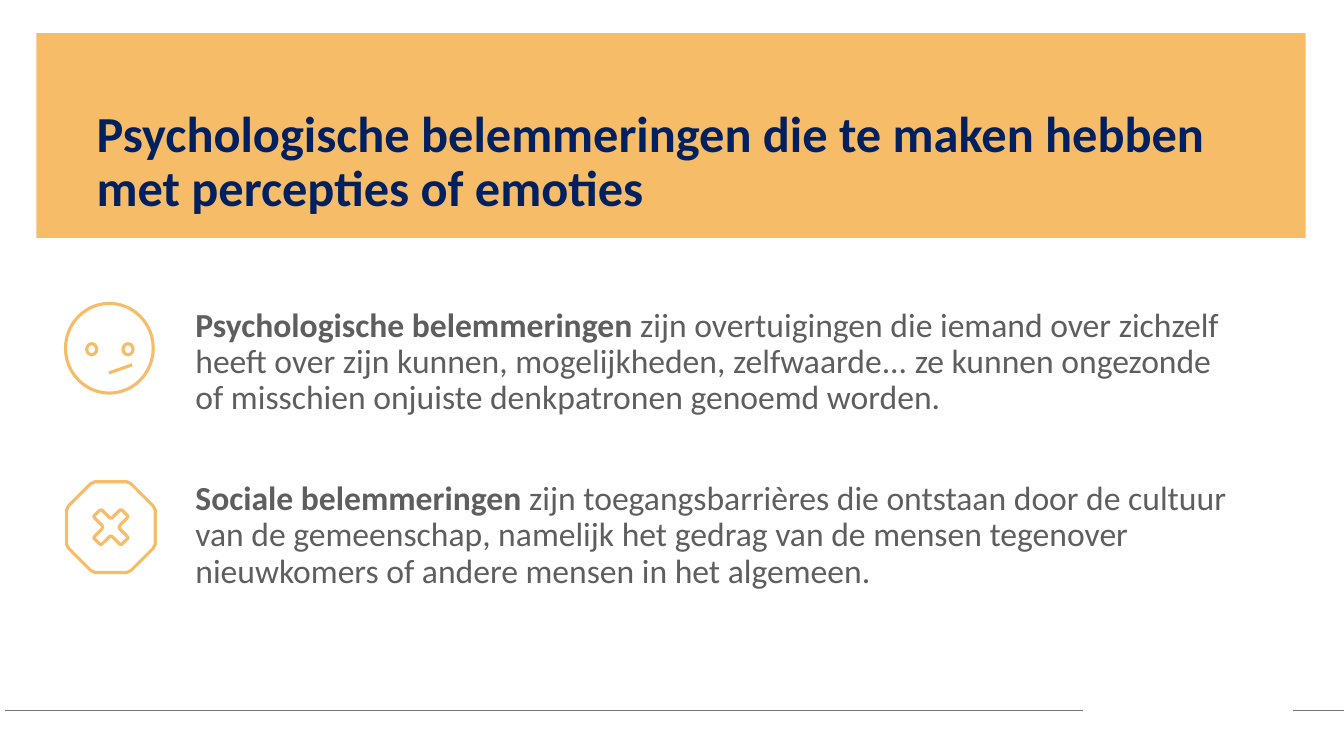
from lxml.etree import SubElement
from pptx import Presentation
from pptx.dml.color import RGBColor
from pptx.enum.shapes import MSO_CONNECTOR, MSO_SHAPE
from pptx.enum.text import MSO_ANCHOR
from pptx.oxml.ns import qn
from pptx.util import Pt

PX = 9144
ORANGE, NAVY, GREY, RULE = "F6BC67", "002060", "5E5E5E", "797979"

prs = Presentation()
prs.slide_width, prs.slide_height = 1333 * PX, 750 * PX
s = prs.slides.add_slide(prs.slide_layouts[6])


def rgb(color):
    return RGBColor.from_string(color)


def add_text(tf, text, *, first=True, bold_lead="", size, color, before=0):
    p = tf.paragraphs[0] if first else tf.add_paragraph()
    p.line_spacing = 0.9
    p.space_before = Pt(before)
    for part, bold in ((bold_lead, True), (text, False)):
        if part:
            r = p.add_run()
            r.text = part
            r.font.name = "Calibri"
            r.font.size = Pt(size)
            r.font.bold = bold
            r.font.color.rgb = rgb(color)


banner = s.shapes.add_shape(MSO_SHAPE.RECTANGLE, 36 * PX, 33 * PX, 1259 * PX, 203 * PX)
banner.shadow.inherit = False
banner.fill.solid()
banner.fill.fore_color.rgb = rgb(ORANGE)
banner.line.fill.background()

for x1, y1, x2, y2, color, width in (
    (1074, 705, 5, 705, RULE, 0.5),
    (1333, 705, 1282, 705, RULE, 0.5),
    (108, 370, 131, 362, ORANGE, 2.25),
):
    line = s.shapes.add_connector(MSO_CONNECTOR.STRAIGHT, x1 * PX, y1 * PX, x2 * PX, y2 * PX)
    line.line.color.rgb = rgb(color)
    line.line.width = Pt(width)
    SubElement(line._element.spPr, qn("a:effectLst"))

frames = []
for x, y, w, h in ((86, 103, 1155, 76), (184, 301, 1057, 355)):
    tf = s.shapes.add_textbox(x * PX, y * PX, w * PX, h * PX).text_frame
    tf.word_wrap = True
    tf.vertical_anchor = MSO_ANCHOR.TOP
    frames.append(tf)
title, body = frames

add_text(title, "", bold_lead="Psychologische belemmeringen die te maken hebben met percepties of emoties",
         size=36, color=NAVY)
add_text(body, "zijn overtuigingen die iemand over zichzelf heeft over zijn kunnen, mogelijkheden, "
         "zelfwaarde... ze kunnen ongezonde of misschien onjuiste denkpatronen genoemd worden.",
         bold_lead="Psychologische belemmeringen ", size=24, color=GREY)
add_text(body, "zijn toegangsbarrières die ontstaan door de cultuur van de gemeenschap, namelijk "
         "het gedrag van de mensen tegenover nieuwkomers of andere mensen in het algemeen.",
         first=False, bold_lead="Sociale belemmeringen ", size=24, color=GREY, before=46)

icons = []
for x, y, w, h in ((65, 301, 87, 89), (86, 341, 10, 11), (122, 341, 10, 11)):
    icons.append(s.shapes.add_shape(MSO_SHAPE.OVAL, x * PX, y * PX, w * PX, h * PX))

cx, cy = 110, 523
octagon = [(44, 17), (43, 19), (42, 21), (20, 43), (18, 44), (16, 45)]
cross = [(8, 0), (9, 2), (16, 9), (17, 11), (16, 12), (11, 17), (10, 17), (9, 17), (1, 9), (0, 9)]
outlines = []
for quarter in (octagon, cross):
    half = quarter + [(-x, y) for x, y in reversed(quarter)]
    whole = half + [(x, -y) for x, y in reversed(half)]
    outlines.append([(cx + x, cy + y) for x, y in whole])
stop = s.shapes.build_freeform(*outlines[0][0], scale=PX)
stop.add_line_segments(outlines[0][1:], close=True)
stop.move_to(*outlines[1][0])
stop.add_line_segments(outlines[1][1:], close=True)
icons.append(stop.convert_to_shape())

for sp in icons:
    sp.shadow.inherit = False
    sp.fill.background()
    sp.line.color.rgb = rgb(ORANGE)
    sp.line.width = Pt(2.25)

prs.save("out.pptx")
